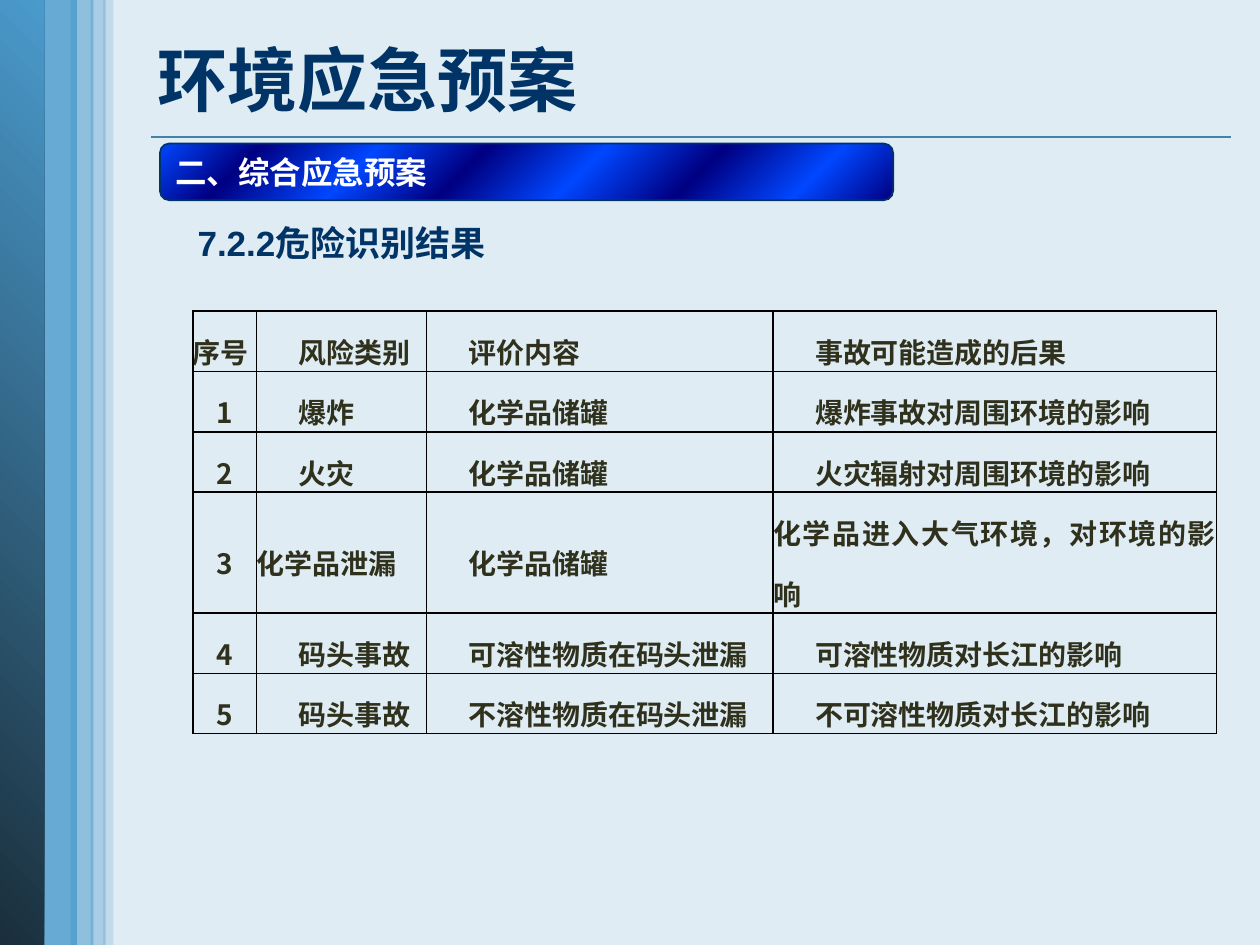
from lxml.etree import SubElement
from pptx import Presentation
from pptx.dml.color import RGBColor
from pptx.enum.shapes import MSO_CONNECTOR, MSO_SHAPE
from pptx.enum.text import MSO_ANCHOR, PP_ALIGN
from pptx.oxml.ns import qn
from pptx.util import Pt

COLORS = {
    "background": "DFECF3", "sky": "4A9ACC", "deep": "1A2E3B", "rule": "4582A7",
    "navy": "003366", "bright": "0047FF", "dark": "000082", "white": "FFFFFF",
    "cell": "30311D", "border": "000000",
}
CJK = "Noto Sans CJK SC"
INDENT = 24


def color(name):
    return RGBColor.from_string(COLORS[name])


class SlideBuilder:
    def __init__(self, deck):
        self.page = deck.slides.add_slide(deck.slide_layouts[5])
        fill = self.page.background.fill
        fill.solid()
        fill.fore_color.rgb = color("background")

    def add_span(self, para, text, size, font, ink):
        span = para.add_run()
        span.text = text
        span.font.size, span.font.name, span.font.bold = Pt(size), font, True
        span.font.color.rgb = color(ink)
        SubElement(span.font._element, qn("a:ea")).set("typeface", CJK)

    def title(self, text, left, top, width, height):
        box = self.page.shapes.title
        box.left, box.top, box.width, box.height = map(Pt, (left, top, width, height))
        box.text_frame.vertical_anchor = MSO_ANCHOR.MIDDLE
        para = box.text_frame.paragraphs[0]
        para.alignment = PP_ALIGN.LEFT
        self.add_span(para, text, 40, "Arial", "navy")

    def shape(self, kind, left, top, width, height):
        box = self.page.shapes.add_shape(kind, *map(Pt, (left, top, width, height)))
        box.shadow.inherit = False
        box.line.fill.background()
        return box

    def strip(self, left, width, opacity):
        box = self.shape(MSO_SHAPE.RECTANGLE, left, 0, width, 540)
        box.fill.solid()
        box.fill.fore_color.rgb = color("sky")
        tint = box._element.spPr.find(qn("a:solidFill"))[0]
        SubElement(tint, qn("a:alpha")).set("val", str(opacity * 1000))

    def gradient(self, box, stops, angle):
        box.fill.gradient()
        gradient = box._element.spPr.find(qn("a:gradFill"))
        stop_list = gradient.find(qn("a:gsLst"))
        for stop in list(stop_list):
            stop_list.remove(stop)
        for position, name in stops:
            stop = SubElement(stop_list, qn("a:gs"), pos=str(position * 1000))
            SubElement(stop, qn("a:srgbClr"), val=COLORS[name])
        gradient.find(qn("a:lin")).set("ang", str(angle * 60000))

    def rule(self, left, right, top):
        line = self.page.shapes.add_connector(
            MSO_CONNECTOR.STRAIGHT, Pt(left), Pt(top), Pt(right), Pt(top))
        line.line.color.rgb = color("rule")
        line.line.width = Pt(1)
        SubElement(line._element.spPr, qn("a:effectLst"))

    def banner(self, text, left, top, width, height):
        box = self.shape(MSO_SHAPE.ROUNDED_RECTANGLE, left, top, width, height)
        positions = (0, 13, 28, 42, 57, 72, 87, 100)
        self.gradient(box, [(position, ("bright", "dark")[index % 2])
                            for index, position in enumerate(positions)], 45)
        box.line.color.rgb = color("navy")
        box.line.width = Pt(1)
        box.text_frame.word_wrap = False
        box.text_frame.vertical_anchor = MSO_ANCHOR.MIDDLE
        para = box.text_frame.paragraphs[0]
        para.alignment = PP_ALIGN.LEFT
        self.add_span(para, text, 18, CJK, "white")

    def heading(self, text, left, top, width, height):
        box = self.page.shapes.add_textbox(*map(Pt, (left, top, width, height)))
        box.text_frame.word_wrap = True
        para = box.text_frame.paragraphs[0]
        para.space_before = Pt(4)
        self.add_span(para, text, 20, "Arial", "navy")

    def table(self, rows, left, top, widths, heights):
        frame = self.page.shapes.add_table(
            len(rows), len(widths), Pt(left), Pt(top), Pt(sum(widths)), Pt(sum(heights)))
        table = frame.table
        table.first_row = table.horz_banding = False
        for column, width in zip(table.columns, widths):
            column.width = Pt(width)
        for row, height, texts in zip(table.rows, heights, rows):
            row.height = Pt(height)
            for index, (cell, text) in enumerate(zip(row.cells, texts)):
                flush = index == 0 or text == "化学品泄漏" or len(text) > 12
                self.cell(cell, text, 0 if flush else INDENT)

    def cell(self, cell, text, indent):
        cell.margin_left = cell.margin_right = cell.margin_top = cell.margin_bottom = 0
        cell.vertical_anchor = MSO_ANCHOR.MIDDLE
        properties = cell._tc.get_or_add_tcPr()
        for side in ("lnL", "lnR", "lnT", "lnB"):
            edge = SubElement(properties, qn(f"a:{side}"), w=str(Pt(1)))
            SubElement(SubElement(edge, qn("a:solidFill")), qn("a:srgbClr"),
                       val=COLORS["border"])
        cell.fill.background()
        para = cell.text_frame.paragraphs[0]
        para.alignment = PP_ALIGN.CENTER if text.isdigit() else PP_ALIGN.JUSTIFY
        para.line_spacing = 1.5
        para._p.get_or_add_pPr().set("indent", str(Pt(indent)))
        self.add_span(para, text, 16, CJK if text.isdigit() else "Times New Roman", "cell")


def main():
    deck = Presentation()
    deck.slide_width, deck.slide_height = Pt(720), Pt(540)
    slide = SlideBuilder(deck)

    slide.rule(86.5, 703.5, 78.5)
    slide.strip(21.6, 22.3, 80)
    edge = slide.shape(MSO_SHAPE.RECTANGLE, -0.7, 0, 25.9, 540)
    slide.gradient(edge, [(0, "deep"), (100, "sky")], 315)
    for left, width, opacity in ((59, 5.8, 20), (40.3, 13, 54), (51.8, 8.6, 37)):
        slide.strip(left, width, opacity)

    slide.title("环境应急预案", 82.8, 5, 626.4, 80)
    slide.banner("二、综合应急预案", 91.4, 82, 419, 32.4)
    slide.heading("7.2.2危险识别结果", 105.8, 123, 578, 28)
    slide.table([
        ("序号", "风险类别", "评价内容", "事故可能造成的后果"),
        ("1", "爆炸", "化学品储罐", "爆炸事故对周围环境的影响"),
        ("2", "火灾", "化学品储罐", "火灾辐射对周围环境的影响"),
        ("3", "化学品泄漏", "化学品储罐", "化学品进入大气环境，对环境的影响"),
        ("4", "码头事故", "可溶性物质在码头泄漏", "可溶性物质对长江的影响"),
        ("5", "码头事故", "不溶性物质在码头泄漏", "不可溶性物质对长江的影响"),
    ], 110.2, 177.8, (36.4, 97.2, 198, 253.4), (34.5, 34.5, 34.5, 69, 34.5, 34.5))
    deck.save("out.pptx")


if __name__ == "__main__":
    main()
